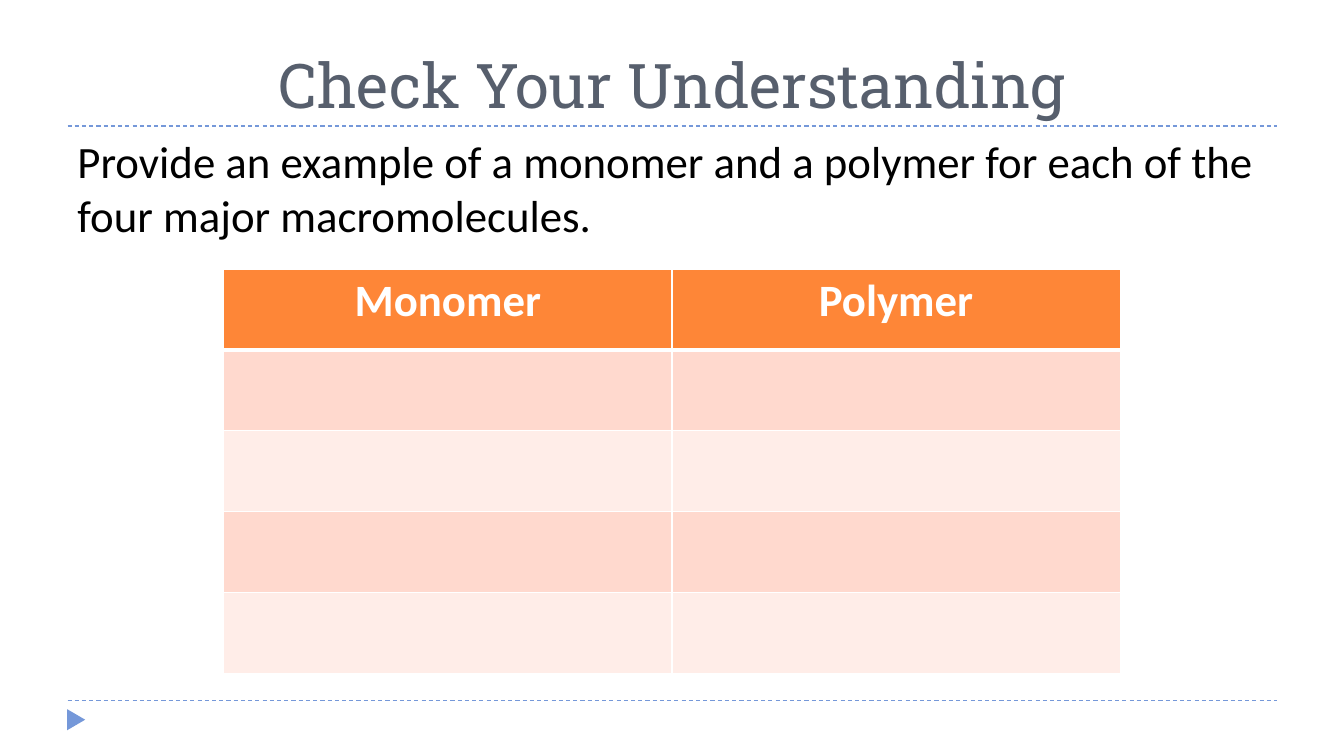
from lxml import etree
from pptx import Presentation
from pptx.dml.color import RGBColor
from pptx.enum import dml, shapes, text
from pptx.oxml import parse_xml
from pptx.oxml.ns import nsdecls, qn
from pptx.util import Inches, Pt

BLUE, SLATE, ORANGE = "7598D9", "575F6D", "FE8637"
BLACK, WHITE = "000000", "FFFFFF"
BANDS = ("FFD9CE", "FFEDE8")
HEADINGS = ("Monomer", "Polymer")
ANSWER_ROWS = 4


def color(value):
    return RGBColor.from_string(value)


def style(paragraph, size, name, value, bold=False):
    font = paragraph.font
    font.size, font.name, font.bold = Pt(size), name, bold
    font.color.rgb = color(value)


def add_rule(slide, y):
    line = slide.shapes.add_connector(
        shapes.MSO_CONNECTOR.STRAIGHT,
        Inches(0.67), Inches(y), Inches(12.67), Inches(y))
    line.line.color.rgb = color(BLUE)
    line.line.width = Pt(0.75)
    line.line.dash_style = dml.MSO_LINE.DASH
    etree.SubElement(line._element.spPr, qn("a:effectLst"))


def add_marker(slide):
    marker = slide.shapes.add_shape(
        shapes.MSO_SHAPE.ISOSCELES_TRIANGLE,
        Inches(0.65), Inches(7.05), Inches(0.21), Inches(0.18))
    marker.rotation = 90
    marker.shadow.inherit = False
    marker.fill.solid()
    marker.fill.fore_color.rgb = color(BLUE)
    marker.line.fill.background()


def add_text(slide, top, height, words, size, name, value, anchor, align):
    box = slide.shapes.add_textbox(
        Inches(0.67), Inches(top), Inches(12), Inches(height))
    frame = box.text_frame
    frame.word_wrap = True
    frame.vertical_anchor = anchor
    paragraph = frame.paragraphs[0]
    paragraph.text = words
    paragraph.alignment = align
    style(paragraph, size, name, value)


def set_borders(cell, bottom):
    properties = cell._tc.get_or_add_tcPr()
    widths = {"lnL": 1, "lnR": 1, "lnT": 1, "lnB": bottom}
    # Borders come before the fill in the cell properties
    for index, (side, width) in enumerate(widths.items()):
        properties.insert(index, parse_xml(
            f'<a:{side} {nsdecls("a")} w="{Pt(width)}"><a:solidFill>'
            f'<a:srgbClr val="{WHITE}"/></a:solidFill></a:{side}>'))


def add_answer_table(slide):
    row_count = ANSWER_ROWS + 1
    table = slide.shapes.add_table(
        row_count, len(HEADINGS),
        Inches(2.22), Inches(2.67), Inches(8.89), Inches(4.01)).table
    for row in range(row_count):
        for column in range(len(HEADINGS)):
            cell = table.cell(row, column)
            cell.fill.solid()
            fill = BANDS[(row - 1) % 2] if row else ORANGE
            cell.fill.fore_color.rgb = color(fill)
            set_borders(cell, 1 if row else 3)
    # Header row
    for column, heading in enumerate(HEADINGS):
        paragraph = table.cell(0, column).text_frame.paragraphs[0]
        paragraph.text = heading
        paragraph.alignment = text.PP_ALIGN.CENTER
        style(paragraph, 32, "Calibri", WHITE, bold=True)
    # The rule below the header is drawn by both neighbouring rows
    for column in range(len(HEADINGS)):
        properties = table.cell(1, column)._tc.tcPr
        properties.find(qn("a:lnT")).set("w", str(Pt(3)))


def main():
    presentation = Presentation()
    presentation.slide_width = Inches(13.33)
    presentation.slide_height = Inches(7.5)
    slide = presentation.slides.add_slide(presentation.slide_layouts[6])

    # Dashed rules and corner marker
    for y in (6.95, 1.25):
        add_rule(slide, y)
    add_marker(slide)

    # Title and question
    add_text(slide, 0.17, 1.08, "Check Your Understanding",
             44, "Roboto Slab", SLATE,
             text.MSO_ANCHOR.BOTTOM, text.PP_ALIGN.CENTER)
    add_text(slide, 1.28, 5.4,
             "Provide an example of a monomer and a polymer for each of the "
             "four major macromolecules.",
             32, "Calibri", BLACK, text.MSO_ANCHOR.TOP, text.PP_ALIGN.LEFT)

    # Answer table
    add_answer_table(slide)
    presentation.save("out.pptx")


if __name__ == "__main__":
    main()
